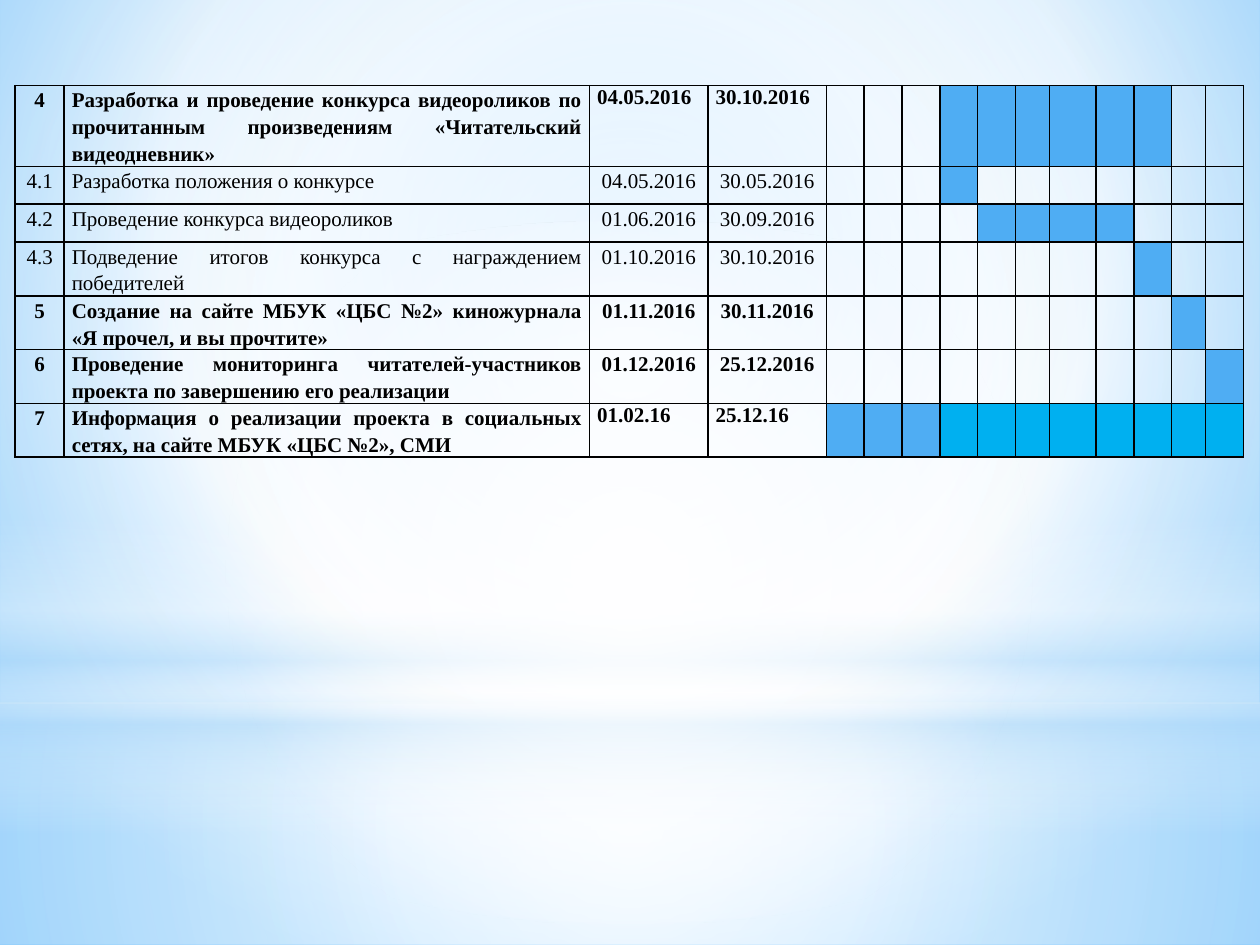
from dataclasses import dataclass
from typing import Optional

from lxml import etree
from pptx import Presentation
from pptx.dml.color import RGBColor
from pptx.enum import shapes, text
from pptx.oxml import ns
from pptx.util import Inches, Pt

BLACK = RGBColor(0x00, 0x00, 0x00)
WHITE = RGBColor(0xFF, 0xFF, 0xFF)
PALE = RGBColor(0xB4, 0xDC, 0xFA)
SKY = RGBColor(0x9E, 0xD5, 0xFF)
AZURE = RGBColor(0x5B, 0xB9, 0xFF)
BLUE = RGBColor(0x4F, 0xAD, 0xF3)
CYAN = RGBColor(0x00, 0xB0, 0xF0)

FONT = "Times New Roman"
MONTHS = 11
FIRST_MONTH_COLUMN = 4
COLUMN_WIDTHS = [0.39, 4.17, 0.94, 0.94, *[0.3] * 5, 0.27, 0.37, 0.3, 0.3, 0.27, 0.3]
CENTERED = (1, 1, 1, 1)


@dataclass
class Stop:
    position: int
    color: RGBColor
    opacity: int = 100


@dataclass
class Gradient:
    stops: list[Stop]
    focus: Optional[tuple[int, int, int, int]] = None  # None: top to bottom


@dataclass
class Glow:
    outline: shapes.MSO_SHAPE
    top: float
    height: float
    gradient: Gradient


@dataclass
class Task:
    number: str
    title: str
    start: str
    end: str
    months: dict[int, RGBColor]
    height: float
    bold: bool = False
    plain_dates: bool = False


def span(first: int, last: int, color: RGBColor = BLUE) -> dict[int, RGBColor]:
    return {month: color for month in range(first, last + 1)}


CENTER = (50, 50, 50, 50)
BACKDROP = Gradient([Stop(0, SKY), Stop(60, WHITE), Stop(100, AZURE)], (20, 10, 20, 60))
GLOWS = [
    Glow(shapes.MSO_SHAPE.RECTANGLE, 5.58, 1.92, Gradient(
        [Stop(0, WHITE, 91), Stop(37, WHITE, 76), Stop(100, PALE, 79)], CENTER)),
    Glow(shapes.MSO_SHAPE.RECTANGLE, 0, 5.58, Gradient(
        [Stop(0, WHITE, 89), Stop(48, WHITE, 62), Stop(100, PALE, 79)], CENTER)),
    Glow(shapes.MSO_SHAPE.RECTANGLE, 4.12, 2.5, Gradient(
        [Stop(0, WHITE, 0), Stop(29, WHITE, 30), Stop(45, PALE, 40),
         Stop(55, WHITE, 26), Stop(65, PALE, 60), Stop(100, WHITE, 0)])),
    Glow(shapes.MSO_SHAPE.OVAL, 1.75, 5.58, Gradient(
        [Stop(0, WHITE), Stop(56, WHITE, 0)], CENTER)),
]

# Months are counted from February (0) to December (10)
TASKS = [
    Task("4", "Разработка и проведение конкурса видеороликов по прочитанным "
         "произведениям «Читательский видеодневник»",
         "04.05.2016", "30.10.2016", span(3, 8), 0.64, bold=True, plain_dates=True),
    Task("4.1", "Разработка положения о конкурсе",
         "04.05.2016", "30.05.2016", span(3, 3), 0.3),
    Task("4.2", "Проведение конкурса видеороликов",
         "01.06.2016", "30.09.2016", span(4, 7), 0.3),
    Task("4.3", "Подведение итогов конкурса с награждением победителей",
         "01.10.2016", "30.10.2016", span(8, 8), 0.43),
    Task("5", "Создание на сайте МБУК «ЦБС №2» киножурнала «Я прочел, и вы прочтите»",
         "01.11.2016", "30.11.2016", span(9, 9), 0.42, bold=True),
    Task("6", "Проведение мониторинга читателей-участников проекта "
         "по завершению его реализации",
         "01.12.2016", "25.12.2016", span(10, 10), 0.42, bold=True),
    Task("7", "Информация о реализации проекта в социальных сетях, "
         "на сайте МБУК «ЦБС №2», СМИ",
         "01.02.16", "25.12.16", span(0, 2) | span(3, 10, CYAN), 0.42,
         bold=True, plain_dates=True),
]


def add_child(parent, tag: str, **attributes):
    return etree.SubElement(parent, ns.qn(tag), {k: str(v) for k, v in attributes.items()})


def apply_gradient(fill, element, gradient: Gradient) -> None:
    """Swap a solid fill inside the element for a gradient with transparency."""
    fill.solid()
    solid = element.find(".//" + ns.qn("a:solidFill"))
    grad = etree.Element(ns.qn("a:gradFill"), rotWithShape="1")
    stops = add_child(grad, "a:gsLst")
    for stop in gradient.stops:
        mark = add_child(stops, "a:gs", pos=stop.position * 1000)
        color = add_child(mark, "a:srgbClr", val=stop.color)
        if stop.opacity < 100:
            add_child(color, "a:alpha", val=stop.opacity * 1000)
    if gradient.focus:
        path = add_child(grad, "a:path", path="circle")
        sides = zip("ltrb", gradient.focus)
        add_child(path, "a:fillToRect", **{side: pct * 1000 for side, pct in sides})
    else:
        add_child(grad, "a:lin", ang=5400000, scaled=0)
    solid.getparent().replace(solid, grad)


def add_glow(slide, glow: Glow) -> None:
    light = slide.shapes.add_shape(
        glow.outline, 0, Inches(glow.top), Inches(10), Inches(glow.height))
    light.shadow.inherit = False
    light.line.fill.background()
    apply_gradient(light.fill, light.element.spPr, glow.gradient)


def style_cell(cell, color: Optional[RGBColor] = None) -> None:
    cell.margin_left = cell.margin_right = Inches(0.06)
    cell.margin_top = cell.margin_bottom = 0
    if color is None:
        cell.fill.background()
    else:
        cell.fill.solid()
        cell.fill.fore_color.rgb = color
    properties = cell._tc.get_or_add_tcPr()
    for index, side in enumerate("LRTB"):
        border = etree.Element(ns.qn(f"a:ln{side}"), w=str(Pt(1)))
        add_child(add_child(border, "a:solidFill"), "a:srgbClr", val=BLACK)
        properties.insert(index, border)


def write_cell(cell, words: str, bold: bool, align: Optional[text.PP_ALIGN]) -> None:
    style_cell(cell)
    cell.text_frame.text = words
    paragraph = cell.text_frame.paragraphs[0]
    if align is not None:
        paragraph.alignment = align
        paragraph.line_spacing = 1.15
    font = paragraph.runs[0].font
    font.name, font.size, font.bold = FONT, Pt(12), bold
    font.color.rgb = BLACK


def fill_row(table, row: int, task: Task) -> None:
    table.rows[row].height = Inches(task.height)
    center = text.PP_ALIGN.CENTER
    dates = None if task.plain_dates else center
    labels = [(task.number, center), (task.title, text.PP_ALIGN.JUSTIFY),
              (task.start, dates), (task.end, dates)]
    for column, (words, align) in enumerate(labels):
        write_cell(table.cell(row, column), words, task.bold, align)
    for month in range(MONTHS):
        cell = table.cell(row, FIRST_MONTH_COLUMN + month)
        style_cell(cell, task.months.get(month))
        # Small text size keeps the empty cells from stretching the row
        add_child(cell.text_frame.paragraphs[0]._p, "a:endParaRPr", sz=1200)


def main() -> None:
    deck = Presentation()
    deck.slide_width, deck.slide_height = Inches(10), Inches(7.5)
    slide = deck.slides.add_slide(deck.slide_layouts[6])

    # Backdrop
    apply_gradient(slide.background.fill, slide.element, BACKDROP)
    for glow in GLOWS:
        add_glow(slide, glow)

    # Project schedule
    schedule = slide.shapes.add_table(
        len(TASKS), len(COLUMN_WIDTHS), Inches(0.12), Inches(0.68),
        Inches(sum(COLUMN_WIDTHS)), Inches(sum(task.height for task in TASKS))).table
    schedule.first_row = schedule.horz_banding = False
    for column, width in zip(schedule.columns, COLUMN_WIDTHS):
        column.width = Inches(width)
    for row, task in enumerate(TASKS):
        fill_row(schedule, row, task)

    deck.save("out.pptx")


if __name__ == "__main__":
    main()
